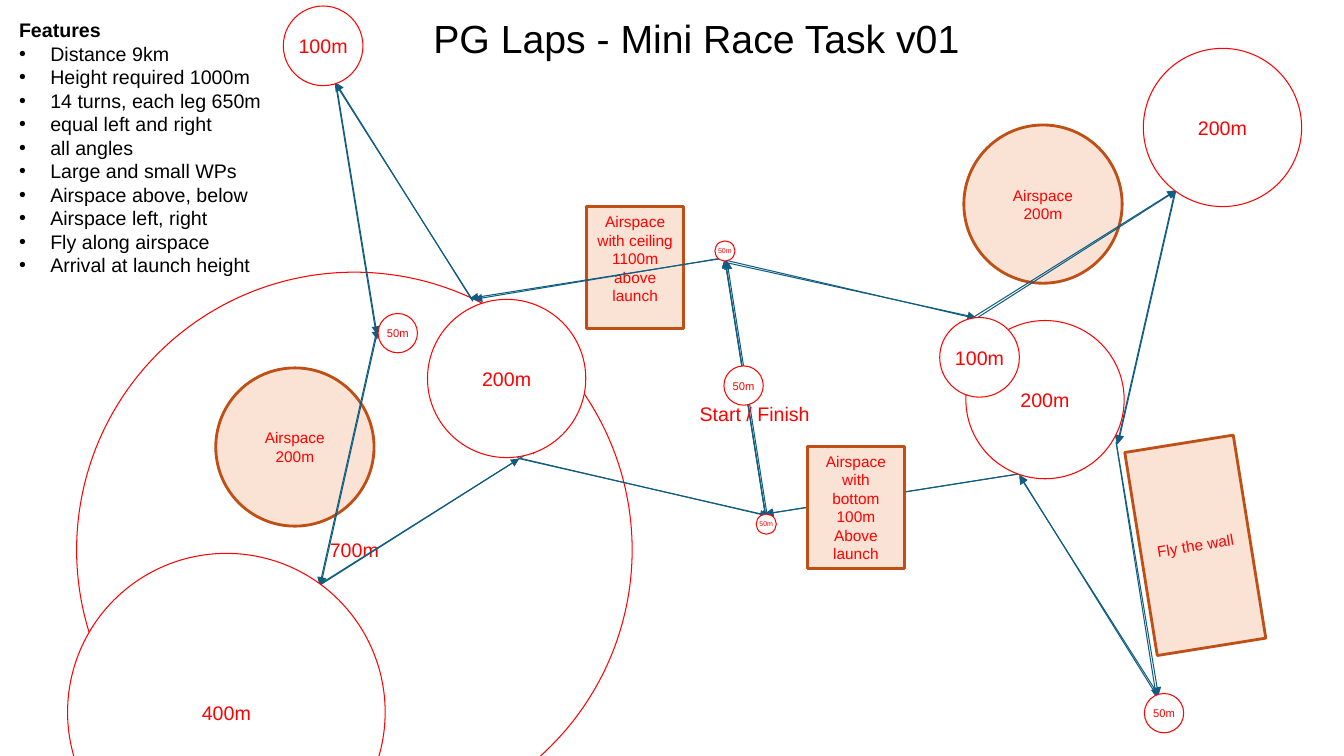
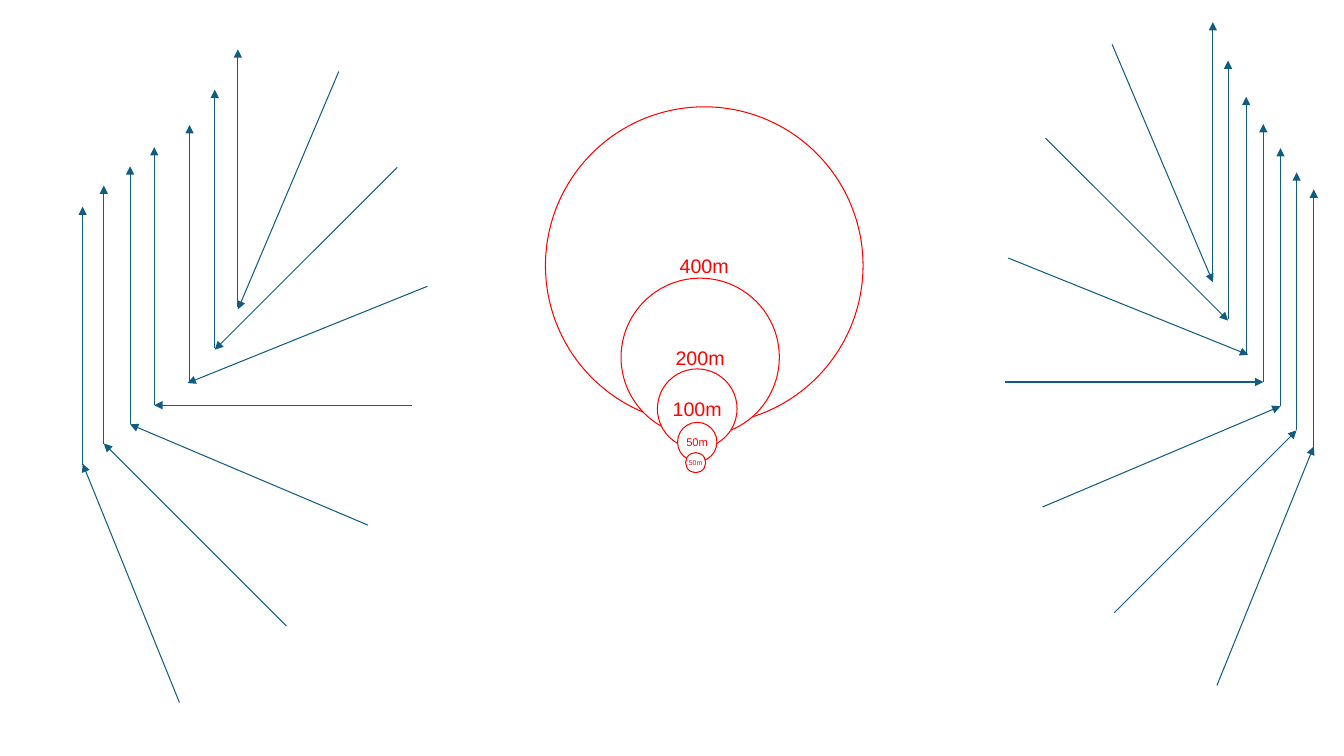
from copy import deepcopy
from dataclasses import dataclass
from typing import NamedTuple

from lxml.etree import SubElement
from pptx import Presentation
from pptx.dml.color import RGBColor
from pptx.enum.shapes import MSO_CONNECTOR as Conn, MSO_SHAPE as Shape
from pptx.enum.text import MSO_ANCHOR as Anchor, MSO_AUTO_SIZE as AutoSize, PP_ALIGN as Align
from pptx.oxml.ns import qn
from pptx.util import Emu, Pt

EMU_PER_PX = 9144


@dataclass(frozen=True)
class Theme:
    font: str = "Arial"
    ink: str = "000000"
    red: str = "FF0000"
    white: str = "FFFFFF"
    peach: str = "FAE2D5"
    rust: str = "BF4F14"
    blue: str = "115D81"
    title: int = 28
    body: int = 14
    note: int = 11
    small: int = 8
    tiny: int = 5
    thin: float = 0.75
    thick: float = 2


THEME = Theme()


class Ring(NamedTuple):
    label: str
    diameter: int
    size: int


class Waypoint(NamedTuple):
    ring: Ring
    x: int
    y: int


class Airspace(NamedTuple):
    kind: Shape
    x: int
    y: int
    w: int
    h: int
    paras: tuple[str, ...]
    rotation: float = 0
    bottom: int = 5


class Leg(NamedTuple):
    x1: int
    y1: int
    x2: int
    y2: int


class Approach(NamedTuple):
    dx: int
    dy: int
    gap_x: int = 0
    gap_y: int = 0


R700 = Ring("700m", 551, THEME.body)
R400 = Ring("400m", 315, THEME.body)
R200 = Ring("200m", 157, THEME.body)
R100 = Ring("100m", 79, THEME.body)
R50 = Ring("50m", 39, THEME.small)
R50_TINY = Ring("50m", 20, THEME.tiny)

CEILING = Airspace(Shape.RECTANGLE, 582, 205, 96, 121,
                   ("Airspace\nwith ceiling", "1100m", "above launch"), bottom=23)
FLOOR = Airspace(Shape.RECTANGLE, 801, 443, 96, 121,
                 ("Airspace\nwith bottom", "100m", "Above launch"))
WALL = Airspace(Shape.RECTANGLE, 1131, 439, 109, 204, ("Fly the wall",), rotation=350.9)
ROUND_AIRSPACES = [Airspace(Shape.OVAL, x, y, 157, 157, ("Airspace\n200m",))
                   for x, y in ((214, 365), (956, 124))]

COURSE = [Leg(*c) for c in (
    (1107, 439, 1147, 692), (1165, 191, 1108, 441), (1011, 470, 758, 510),
    (1146, 688, 1011, 471), (719, 256, 466, 296), (759, 509, 719, 256),
    (761, 512, 721, 259), (513, 454, 762, 512), (318, 580, 534, 443),
    (373, 331, 317, 581), (333, 84, 374, 337), (469, 299, 333, 82),
    (374, 331, 318, 581), (333, 80, 374, 332), (951, 327, 1167, 189),
    (718, 260, 968, 315), (515, 455, 764, 512), (299, 591, 515, 455),
    (469, 298, 332, 82), (722, 255, 470, 297), (759, 510, 719, 258),
    (1012, 470, 759, 510), (719, 258, 968, 316), (759, 510, 719, 257),
    (1166, 190, 1109, 440), (949, 325, 1166, 189), (1148, 688, 1011, 472),
    (1107, 438, 1149, 690),
)]
LOWER_WAYPOINTS = [
    Waypoint(R50_TINY, 750, 510), Waypoint(R400, 67, 549), Waypoint(R50, 375, 311),
    Waypoint(R50, 1135, 688), Waypoint(R200, 1134, 48), Waypoint(R100, 281, 6),
    Waypoint(R200, 958, 318), Waypoint(R100, 932, 315), Waypoint(R50_TINY, 709, 239),
]
UPPER_WAYPOINTS = [Waypoint(R200, 424, 297), Waypoint(R50, 718, 363)]
NESTED_RINGS = [
    Waypoint(R400, 541, 106), Waypoint(R200, 616, 276), Waypoint(R100, 652, 366),
    Waypoint(R50, 672, 419), Waypoint(R50_TINY, 680, 449),
]

FEATURES = (
    "Distance 9km", "Height required 1000m", "14 turns, each leg 650m",
    "equal left and right", "all angles", "Large and small WPs",
    "Airspace above, below", "Airspace left, right", "Fly along airspace",
    "Arrival at launch height",
)

LEG_LENGTH = 256
APPROACHES = [
    Approach(96, 237, 0, -1), Approach(181, 181), Approach(236, 100),
    Approach(LEG_LENGTH, 0), Approach(238, -96, -2, 0),
    Approach(181, -181, 0, 2), Approach(100, -236, 0, 2),
]
RIGHT_TURNS = [(1303, 444), (1286, 427), (1270, 403), (1253, 379),
               (1236, 352), (1218, 316), (1203, 278)]
LEFT_TURNS = [(82, 461), (103, 440), (129, 421), (153, 402),
              (188, 380), (213, 345), (236, 305)]


def px(n: int) -> Emu:
    return Emu(n * EMU_PER_PX)


def rgb(color: str) -> RGBColor:
    return RGBColor.from_string(color)


def write(tf, *paras: str, size: int, color: str = THEME.red, align=None,
          anchor=Anchor.TOP, insets=(10, 5, 10, 5)) -> None:
    tf.word_wrap = True
    tf.vertical_anchor = anchor
    tf.margin_left, tf.margin_top, tf.margin_right, tf.margin_bottom = map(px, insets)
    for i, text in enumerate(paras):
        p = tf.add_paragraph() if i else tf.paragraphs[0]
        p.text = text
        p.alignment = align
        for r in p.runs:
            r.font.name = THEME.font
            r.font.size = Pt(size)
            r.font.color.rgb = rgb(color)
        for br in p._p.findall(qn("a:br")):
            br.append(deepcopy(p.runs[0]._r.rPr))


def add_figure(s, kind: Shape, x: int, y: int, w: int, h: int, *, fill: str,
               line: str, width: float):
    sp = s.shapes.add_shape(kind, px(x), px(y), px(w), px(h))
    sp.shadow.inherit = False
    sp.fill.solid()
    sp.fill.fore_color.rgb = rgb(fill)
    sp.line.color.rgb = rgb(line)
    sp.line.width = Pt(width)
    return sp


def add_waypoint(s, waypoint: Waypoint) -> None:
    ring, x, y = waypoint
    sp = add_figure(s, Shape.OVAL, x, y, ring.diameter, ring.diameter,
                    fill=THEME.white, line=THEME.red, width=THEME.thin)
    insets = (10, 5, 10, 5) if ring.diameter > R100.diameter else (0, 0, 0, 0)
    write(sp.text_frame, ring.label, size=ring.size, align=Align.CENTER,
          anchor=Anchor.MIDDLE, insets=insets)


def add_airspace(s, area: Airspace) -> None:
    sp = add_figure(s, area.kind, area.x, area.y, area.w, area.h,
                    fill=THEME.peach, line=THEME.rust, width=THEME.thick)
    sp.rotation = area.rotation
    write(sp.text_frame, *area.paras, size=THEME.note, align=Align.CENTER,
          anchor=Anchor.MIDDLE, insets=(10, 5, 10, area.bottom))


def add_legs(s, legs: list[Leg]) -> None:
    group = s.shapes.add_group_shape()
    for leg in legs:
        c = group.shapes.add_connector(Conn.STRAIGHT, *map(px, leg))
        c.line.color.rgb = rgb(THEME.blue)
        c.line.width = Pt(THEME.thin)
        SubElement(c.line._get_or_add_ln(), qn("a:tailEnd"), type="triangle")
        SubElement(c._element.spPr, qn("a:effectLst"))


def add_label(s, x: int, y: int, w: int, h: int, *paras: str, **fmt):
    tf = s.shapes.add_textbox(px(x), px(y), px(w), px(h)).text_frame
    write(tf, *paras, **fmt)
    tf.auto_size = AutoSize.SHAPE_TO_FIT_TEXT
    return tf


def add_features(s) -> None:
    tf = add_label(s, 9, 13, 262, 269, "Features", *FEATURES,
                   size=THEME.body, color=THEME.ink)
    heading, *items = tf.paragraphs
    heading.runs[0].font.bold = True
    for p in items:
        pPr = p._p.get_or_add_pPr()
        pPr.set("marL", str(px(31)))
        pPr.set("indent", str(px(-31)))
        SubElement(pPr, qn("a:buFont"), typeface=THEME.font)
        SubElement(pPr, qn("a:buChar"), char="•")


def add_turns(s, corners: list[tuple[int, int]], side: int) -> None:
    for (x, y), a in zip(corners, APPROACHES):
        tip_x, tip_y = x + side * a.gap_x, y + a.gap_y
        add_legs(s, [Leg(x, y, x, y - LEG_LENGTH),
                     Leg(tip_x + side * a.dx, tip_y + a.dy, tip_x, tip_y)])


def build_task(s) -> None:
    add_airspace(s, CEILING)
    add_waypoint(s, Waypoint(R700, 76, 270))
    for area in ROUND_AIRSPACES:
        add_airspace(s, area)
    add_legs(s, COURSE)
    add_label(s, 420, 4, 679, 67, "PG Laps - Mini Race Task v01",
              size=THEME.title, color=THEME.ink, insets=(10, 10, 10, 10))
    for waypoint in LOWER_WAYPOINTS:
        add_waypoint(s, waypoint)
    add_label(s, 684, 394, 180, 34, "Start / Finish", size=THEME.body)
    add_waypoint(s, UPPER_WAYPOINTS[0])
    add_airspace(s, FLOOR)
    add_waypoint(s, UPPER_WAYPOINTS[1])
    add_features(s)
    add_airspace(s, WALL)


def build_parts(s) -> None:
    add_turns(s, RIGHT_TURNS, -1)
    add_turns(s, LEFT_TURNS, 1)
    for waypoint in NESTED_RINGS:
        add_waypoint(s, waypoint)


def main() -> None:
    prs = Presentation()
    prs.slide_width, prs.slide_height = px(1333), px(750)
    for build in (build_task, build_parts):
        build(prs.slides.add_slide(prs.slide_layouts[6]))
    prs.save("out.pptx")


if __name__ == "__main__":
    main()
